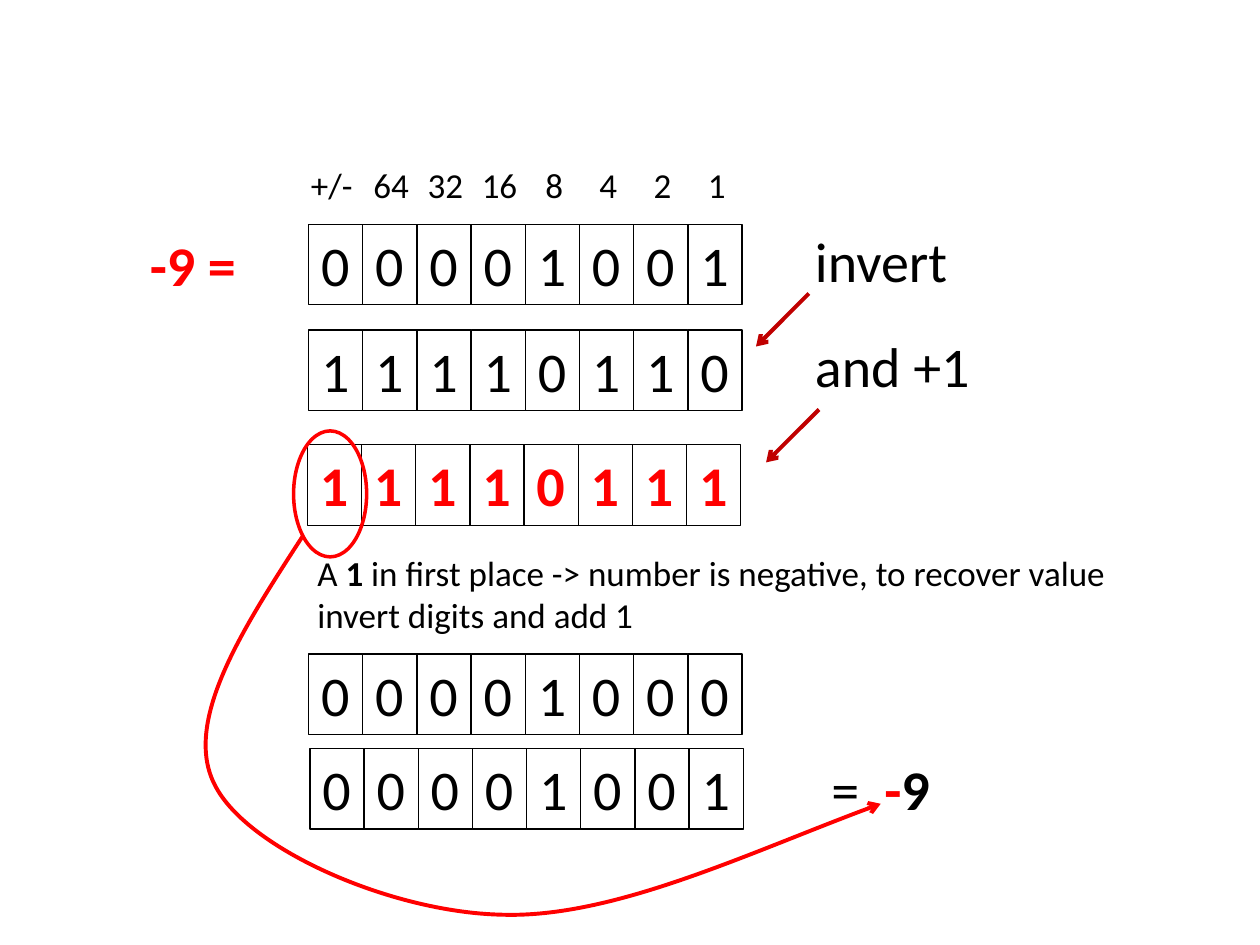
from pptx import Presentation
from pptx.dml.color import RGBColor
from pptx.enum.shapes import MSO_CONNECTOR, MSO_SHAPE
from pptx.enum.text import MSO_ANCHOR, MSO_AUTO_SIZE, PP_ALIGN
from pptx.oxml.ns import qn
from pptx.util import Inches, Pt
from lxml.etree import SubElement

COLORS = {"text": "000000", "accent": "FF0000", "arrow": "C00000"}
FONT = "Calibri"
PITCH = 0.43
CELL_HEIGHT = 0.64
ROWS = [
    (2.45, 1.78, "00001001", "text"),
    (2.45, 2.62, "11110110", "text"),
    (2.44, 3.53, "11110111", "accent"),
    (2.45, 5.19, "00001000", "text"),
    (2.46, 5.94, "00001001", "text"),
]
WEIGHTS = ["64", "32", "16", "8", "4", "2", "1"]


def color(name):
    """Return the named palette colour."""
    return RGBColor.from_string(COLORS[name])


def write(shape, spans, size, wrap=False):
    """Fill a shape with one left-aligned paragraph of (text, colour, bold) spans."""
    frame = shape.text_frame
    frame.word_wrap = wrap
    frame.auto_size = MSO_AUTO_SIZE.SHAPE_TO_FIT_TEXT
    frame.vertical_anchor = MSO_ANCHOR.TOP
    para = frame.paragraphs[0]
    para.alignment = PP_ALIGN.LEFT
    for text, name, bold in spans:
        span = para.add_run()
        span.text = text
        span.font.name = FONT
        span.font.size = Pt(size)
        span.font.bold = bold
        span.font.color.rgb = color(name)


def add_label(page, box, spans, size=32, wrap=False):
    """Add a text box at the given left, top, width, height."""
    label = page.shapes.add_textbox(*map(Inches, box))
    write(label, spans, size, wrap)
    return label


def outline(shape, name, width):
    """Give a shape a plain outline without fill or shadow."""
    shape.shadow.inherit = False
    shape.fill.background()
    shape.line.color.rgb = color(name)
    shape.line.width = Pt(width)


def add_arrowhead(shape):
    """Put an open arrowhead on the end of an outlined shape."""
    SubElement(shape.element.spPr.find(qn("a:ln")), qn("a:tailEnd"), type="arrow")


def add_bit_row(page, left, top, bits, name):
    """Draw one byte as a row of adjoining cells."""
    for index, bit in enumerate(bits):
        box = (left + index * PITCH, top, PITCH, CELL_HEIGHT)
        cell = page.shapes.add_shape(MSO_SHAPE.RECTANGLE, *map(Inches, box))
        outline(cell, "text", 0.75)
        write(cell, [(bit, name, name == "accent")], 32)


def add_weights(page, left, top):
    """Label the sign bit and the place values above the first row."""
    add_label(page, (left - 0.08, top, 0.54, 0.44), [("+/-", "text", False)], 20)
    for index, weight in enumerate(WEIGHTS, start=1):
        width = 0.49 if len(weight) == 2 else 0.34
        center = left + 0.23 + index * PITCH
        box = (center - width / 2, top, width, 0.44)
        add_label(page, box, [(weight, "text", False)], 20)


def add_step_arrow(page, left, top, length):
    """Draw a diagonal arrow pointing down and left within a square."""
    ends = (left + length, top, left, top + length)
    arrow = page.shapes.add_connector(MSO_CONNECTOR.STRAIGHT, *map(Inches, ends))
    arrow.line.color.rgb = color("arrow")
    arrow.line.width = Pt(2.25)
    add_arrowhead(arrow)
    SubElement(arrow.element.spPr, qn("a:effectLst"))


def add_sign_curve(page, start, curves):
    """Draw a curved arrow through cubic segments given as three points each."""
    builder = page.shapes.build_freeform(*map(Inches, start))
    builder.add_line_segments(
        [tuple(map(Inches, curve[-1])) for curve in curves], close=False
    )
    arrow = builder.convert_to_shape()
    for segment, curve in zip(list(arrow.element.iter(qn("a:lnTo"))), curves):
        segment.tag = qn("a:cubicBezTo")
        segment.remove(segment[0])
        for x, y in curve:
            SubElement(
                segment,
                qn("a:pt"),
                x=str(Inches(x) - arrow.left),
                y=str(Inches(y) - arrow.top),
            )
    outline(arrow, "accent", 2.25)
    add_arrowhead(arrow)


def add_result(page, box):
    """Show the recovered value, with the sign at a tab stop."""
    label = add_label(page, box, [])
    properties = label.text_frame.paragraphs[0].alignment = PP_ALIGN.LEFT
    properties = label.text_frame.paragraphs[0]._p.get_or_add_pPr()
    stops = SubElement(properties, qn("a:tabLst"))
    SubElement(stops, qn("a:tab"), pos=str(Inches(0.42)), algn="l")
    write(label, [("=\t", "text", False), ("-", "accent", True), ("9", "text", True)], 32)


def add_explanation(page, box):
    """Explain how the sign bit is read and circle it."""
    spans = [
        ("A ", "text", False),
        ("1", "text", True),
        (
            " in first place -> number is negative, to recover value "
            "invert digits and add 1",
            "text",
            False,
        ),
    ]
    add_label(page, box, spans, 20, wrap=True)
    ring = page.shapes.add_shape(
        MSO_SHAPE.OVAL, Inches(2.33), Inches(3.42), Inches(0.58), Inches(1)
    )
    outline(ring, "accent", 2)


def main():
    """Build the two's complement slide."""
    deck = Presentation()
    deck.slide_width, deck.slide_height = Inches(10), Inches(7.5)
    page = deck.slides.add_slide(deck.slide_layouts[6])
    for row in ROWS:
        add_bit_row(page, *row)
    add_weights(page, 2.45, 1.25)
    add_label(page, (1.09, 1.78, 0.99, 0.64), [("-9 =", "accent", True)])
    add_label(page, (6.37, 1.75, 1.26, 0.64), [("invert", "text", False)])
    add_label(page, (6.37, 2.58, 1.44, 0.64), [("and +1", "text", False)])
    add_explanation(page, (2.42, 4.33, 7.17, 0.77))
    add_result(page, (6.5, 5.94, 0.99, 0.64))
    add_sign_curve(
        page,
        (2.4, 4.26),
        [
            [(1.92, 5), (1.44, 5.74), (1.71, 6.24)],
            [(1.97, 6.74), (3.1, 7.24), (3.98, 7.26)],
            [(4.86, 7.29), (5.98, 6.75), (6.99, 6.38)],
        ],
    )
    add_step_arrow(page, 6, 2.33, 0.42)
    add_step_arrow(page, 6.08, 3.25, 0.42)
    deck.save("out.pptx")


if __name__ == "__main__":
    main()
